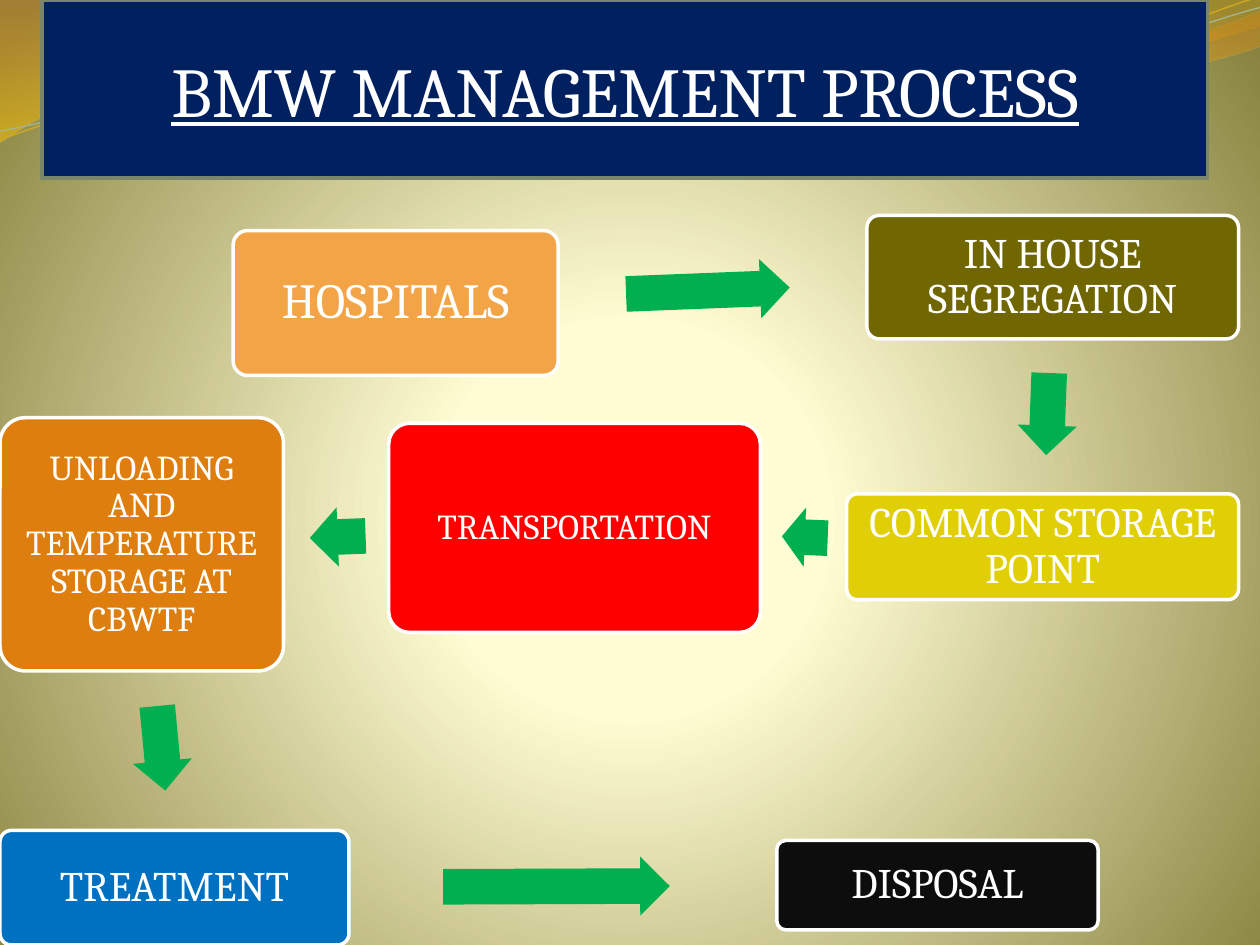
from math import atan2, degrees

from lxml.etree import SubElement
from pptx import Presentation
from pptx.dml.color import RGBColor
from pptx.enum.shapes import MSO_SHAPE as Preset
from pptx.enum.text import MSO_ANCHOR as Anchor, MSO_AUTO_SIZE as AutoSize, PP_ALIGN as Align
from pptx.oxml.ns import qn
from pptx.util import Emu, Inches, Pt

# The slide is a grid of 100 columns and 75 rows, with square cells.
COLUMNS, ROWS = 100, 75
CELL = Inches(0.1)
FONT, WHITE, ARROW_GREEN = "Cambria", "FFFFFF", "00B050"
THREAD_TILT = 357.3

# Steps in process order: text, (left, top, width, height) in cells, fill, text size
STEPS = [
    ("HOSPITALS", (18.5, 18.3, 25.8, 11.5), "F3A447", 28),
    ("IN HOUSE SEGREGATION", (68.8, 17.1, 29.5, 9.8), "706702", 24),
    ("COMMON STORAGE POINT", (67.2, 39.2, 31.1, 8.4), "DFCF04", 24),
    ("TRANSPORTATION", (30.85, 33.6, 29.5, 16.6), "FF0000", 20),
    ("UNLOADING AND TEMPERATURE STORAGE AT CBWTF", (0, 33.15, 22.5, 20.1), "DD7E0E", 20),
    ("TREATMENT", (0, 65.9, 27.7, 9.1), "0070C0", 24),
    ("DISPOSAL", (61.65, 66.7, 25.5, 7.1), "0D0D0D", 24),
]

# Outlines in cells: a start point, then segments of one point (line) or three (curve)
WIDE_WAVE = ((0, 0), [
    [(44, -0.1)],
    [(47.6, 1.7), (66.4, 6.3), (75.8, 6.3)],
    [(85.3, 6.3), (95.8, 2.6), (100, 0.9)],
    [(100.1, 3.6)],
    [(98.3, 4.4), (87, 7.6), (74.6, 7.5)],
    [(62.2, 7.5), (38.2, 2.8), (25.7, 3.4)],
    [(12.9, 3.6), (4.6, 8.3), (-0.1, 11.3)],
    [(0, 0)],
])
RIGHT_WAVE = ((47.9, -0.1), [
    [(50.9, 1.1), (68.2, 6.2), (76.9, 6.5)],
    [(85.6, 6.9), (96.1, 3.2), (100, 2.1)],
    [(100, 0)],
    [(47.9, -0.1)],
])
GOLD_THREAD = ((-0.2, 8.74), [
    [(4.68, 7.18), (15.84, 4.09), (27.75, 4.15)],
    [(39.56, 4.21), (59.14, 9.34), (71.17, 9.01)],
    [(83.2, 8.67), (93.95, 3.57), (100.03, 2.15)],
])
GREEN_THREAD = ((-0.16, 8.05), [
    [(4.58, 7.47), (16.43, 4.52), (28.34, 4.58)],
    [(40.35, 4.65), (59.57, 8.86), (71.6, 8.52)],
    [(83.53, 8.28), (94.23, 4.18), (100.2, 2.96)],
])


def color(value):
    return RGBColor.from_string(value)


def cells(*values):
    return [Emu(round(value * CELL)) for value in values]


def assign(target, **values):
    for name, value in values.items():
        setattr(target, name, value)


def paint(shape, fill=None, line=None, width=2):
    if fill:
        shape.fill.solid()
        shape.fill.fore_color.rgb = color(fill)
    else:
        shape.fill.background()
    if line:
        shape.line.color.rgb = color(line)
        shape.line.width = Pt(width)
    else:
        shape.line.fill.background()


def write(shape, text, size, margin=None, spacing=1.0, **font_values):
    frame = shape.text_frame
    assign(frame, text=text, word_wrap=True, auto_size=AutoSize.NONE, vertical_anchor=Anchor.MIDDLE)
    if margin is not None:
        assign(frame, margin_left=margin, margin_right=margin, margin_top=margin, margin_bottom=margin)
    paragraph = frame.paragraphs[0]
    assign(paragraph, alignment=Align.CENTER, line_spacing=spacing)
    assign(paragraph.font, name=FONT, size=Pt(size), **font_values)
    paragraph.font.color.rgb = color(WHITE)


def set_gradient(fill, parent, stops, center=None):
    """Stops are (position %, colour, opacity %); center is the focus rectangle of a circular gradient."""
    fill.gradient()
    gradient = parent.find(".//" + qn("a:gradFill"))
    for child in list(gradient):
        gradient.remove(child)
    stop_list = SubElement(gradient, qn("a:gsLst"))
    for position, value, opacity in stops:
        stop = SubElement(stop_list, qn("a:gs"), pos=str(position * 1000))
        stop_color = SubElement(stop, qn("a:srgbClr"), val=value)
        if opacity < 100:
            SubElement(stop_color, qn("a:alpha"), val=str(opacity * 1000))
    if center:
        circle = SubElement(gradient, qn("a:path"), path="circle")
        edges = {side: str(share * 1000) for side, share in zip("ltrb", center)}
        SubElement(circle, qn("a:fillToRect"), **edges)
    else:
        SubElement(gradient, qn("a:lin"), ang="5400000", scaled="0")


def add_curve(slide, start, segments, close=False):
    """Lay every point as a line, then join each run of three into one cubic curve."""
    builder = slide.shapes.build_freeform(*cells(*start), scale=1.0)
    builder.add_line_segments([cells(*point) for segment in segments for point in segment], close=close)
    shape = builder.convert_to_shape()
    shape.shadow.inherit = False
    lines = iter(shape.element.findall(".//" + qn("a:lnTo")))
    for segment in segments:
        pieces = [next(lines) for _ in segment]
        if len(pieces) == 3:
            curve = pieces[0]
            outline = curve.getparent()
            cubic = SubElement(outline, qn("a:cubicBezTo"))
            curve.addprevious(cubic)
            for piece in pieces:
                cubic.append(piece[0])
                outline.remove(piece)
    return shape


def add_backdrop(slide):
    set_gradient(slide.background.fill, slide.element,
                 [(0, "FFFCD4", 100), (25, "FFFCD3", 100), (100, "89833F", 100)], (10, 110, 10, 100))
    for outline, stops in ((WIDE_WAVE, [(0, "C07A28", 45), (100, "F7BF00", 55)]),
                           (RIGHT_WAVE, [(0, "C09709", 30), (80, "F59320", 45)])):
        wave = add_curve(slide, *outline, close=True)
        paint(wave)
        set_gradient(wave.fill, wave.element, stops)
    for outline, line, width in ((GOLD_THREAD, "CCA624", 0.85), (GREEN_THREAD, "A5B592", 0.75)):
        thread = add_curve(slide, *outline)
        thread.rotation = THREAD_TILT
        paint(thread, line=line, width=width)


def add_step(slide, text, box, fill, size):
    shape = slide.shapes.add_shape(Preset.ROUNDED_RECTANGLE, *cells(*box))
    shape.adjustments[0] = 0.1
    shape.shadow.inherit = False
    paint(shape, fill, WHITE)
    write(shape, text, size, margin=Pt(size * 0.3), spacing=0.9)


def add_step_arrow(slide, source, target, thickness=4.7):
    """Put an arrow in the gap between two boxes, on the line through their centres."""
    (x1, y1), (x2, y2) = [(left + width / 2, top + height / 2)
                          for left, top, width, height in (source, target)]
    dx, dy = x2 - x1, y2 - y1
    leave, enter = [min(box[2] / 2 / max(abs(dx), 0.01), box[3] / 2 / max(abs(dy), 0.01))
                    for box in (source, target)]
    gap = 1 - leave - enter
    length = 0.53 * gap * (dx ** 2 + dy ** 2) ** 0.5
    middle = leave + 0.485 * gap
    arrow = slide.shapes.add_shape(Preset.RIGHT_ARROW, *cells(
        x1 + middle * dx - length / 2, y1 + middle * dy - thickness / 2, length, thickness))
    arrow.adjustments[0], arrow.adjustments[1] = 0.6, 0.5
    arrow.rotation = degrees(atan2(dy, dx)) % 360
    arrow.shadow.inherit = False
    paint(arrow, ARROW_GREEN)


def add_process(slide, steps):
    for index, step in enumerate(steps):
        add_step(slide, *step)
        if index:
            add_step_arrow(slide, steps[index - 1][1], step[1])


def add_title(slide, text, box):
    title = slide.shapes.title
    left, top, width, height = cells(*box)
    assign(title, left=left, top=top, width=width, height=height)
    paint(title, "002060", "7A866C")
    write(title, text, 40, underline=True)
    slide.shapes._spTree.append(title.element)  # in front of the waves


def main():
    presentation = Presentation()
    assign(presentation, slide_width=COLUMNS * CELL, slide_height=ROWS * CELL)
    slide = presentation.slides.add_slide(presentation.slide_layouts[5])
    add_backdrop(slide)
    add_process(slide, STEPS)
    add_title(slide, "BMW MANAGEMENT PROCESS", (3.35, 0, 92.5, 14.15))
    presentation.save("out.pptx")


if __name__ == "__main__":
    main()
